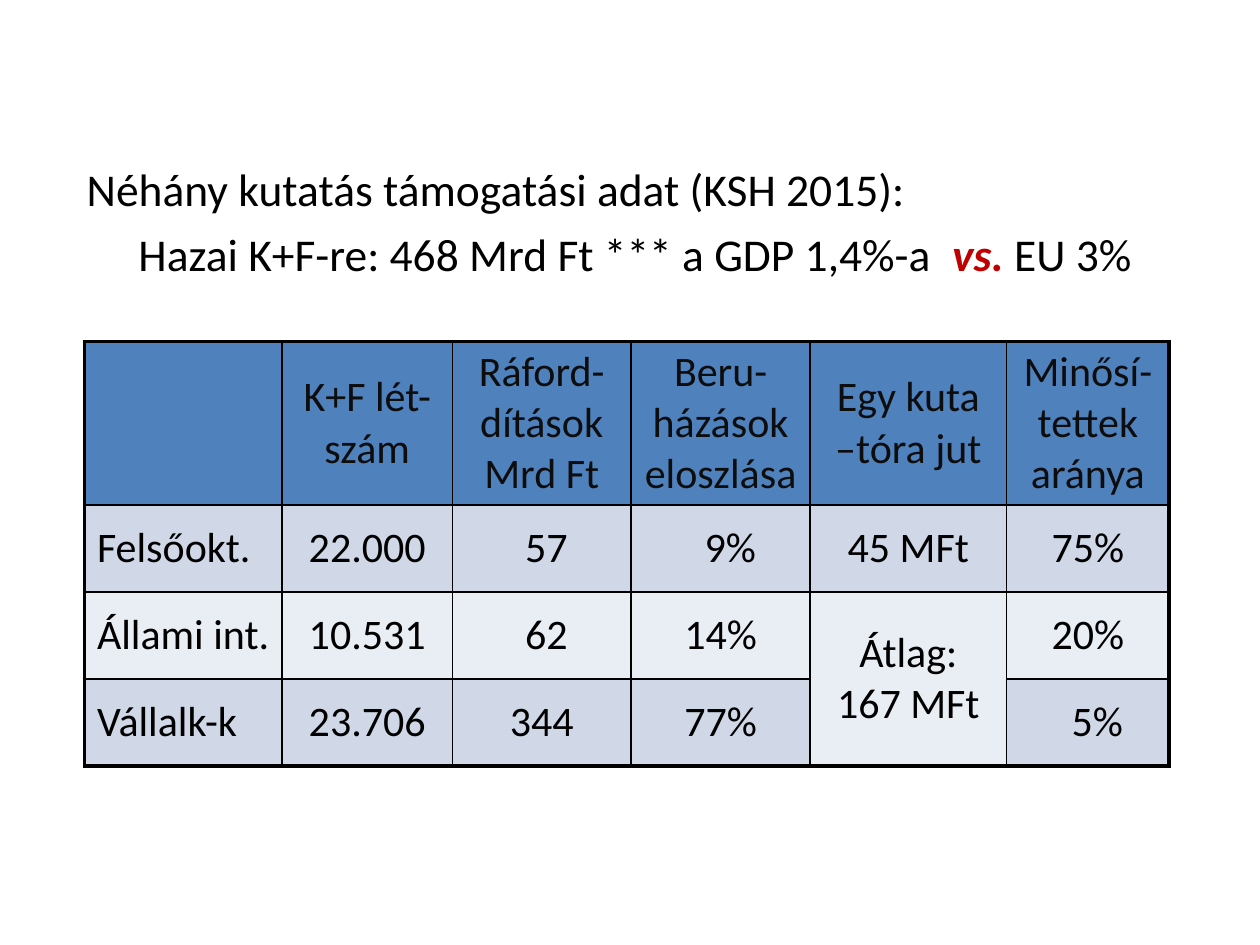
from pptx import Presentation
from pptx.dml.color import RGBColor
from pptx.enum.text import MSO_ANCHOR, MSO_AUTO_SIZE, PP_ALIGN
from pptx.oxml.ns import qn
from pptx.util import Inches, Pt
from lxml.etree import SubElement

BLACK = RGBColor(0x00, 0x00, 0x00)
NEAR_BLACK = RGBColor(0x0D, 0x0D, 0x0D)
RED = RGBColor(0xC0, 0x00, 0x00)
HEADER_BLUE = RGBColor(0x4F, 0x81, 0xBD)
BANDS = (RGBColor(0xE9, 0xED, 0xF4), RGBColor(0xD0, 0xD8, 0xE8))

FONT = "Calibri"
THIN, THICK = Pt(1), Pt(2.25)
COLUMN_WIDTHS = (1.57, 1.35, 1.42, 1.42, 1.56, 1.29)
ROW_HEIGHTS = (1.3, 0.69, 0.69, 0.69)
ROWS = (
    ("", "K+F lét-szám", "Ráford-dítások Mrd Ft", "Beru-házások eloszlása",
     "Egy kuta –tóra jut", "Minősí-tettek aránya"),
    ("Felsőokt.", "22.000", " 57", "  9%", "45 MFt", "75%"),
    ("Állami int.", "10.531", " 62", "14%", "Átlag: 167 MFt", "20%"),
    ("Vállalk-k", "23.706", "344", "77%", "", "  5%"),
)


def add_span(para, text, size, color=BLACK, emphasis=False):
    span = para.add_run()
    span.text = text
    span.font.name = FONT
    span.font.size = Pt(size)
    span.font.color.rgb = color
    span.font.bold = span.font.italic = emphasis


def add_heading(page):
    box = page.shapes.add_textbox(Inches(0.59), Inches(1.23), Inches(8.9), Inches(1.06))
    frame = box.text_frame
    frame.word_wrap = True
    frame.auto_size = MSO_AUTO_SIZE.SHAPE_TO_FIT_TEXT
    title = frame.paragraphs[0]
    add_span(title, "Néhány kutatás támogatási adat (KSH 2015):", 26)
    summary = frame.add_paragraph()
    summary.alignment = PP_ALIGN.CENTER
    add_span(summary, "Hazai K+F-re: 468 Mrd Ft *** a GDP 1,4%-a  ", 26)
    add_span(summary, "vs.", 26, RED, emphasis=True)
    add_span(summary, " EU 3%", 26)
    for para in frame.paragraphs:
        para.space_after = Pt(6)


def set_borders(cell, outer_sides):
    properties = cell._tc.get_or_add_tcPr()
    for side in "LRTB":
        width = THICK if side in outer_sides else THIN
        line = SubElement(properties, qn(f"a:ln{side}"), w=str(width))
        fill = SubElement(line, qn("a:solidFill"))
        SubElement(fill, qn("a:srgbClr"), val=str(BLACK))


def outer_sides_of(row, column):
    edges = {"L": column == 0, "R": column == len(COLUMN_WIDTHS) - 1,
             "T": row == 0, "B": row == len(ROW_HEIGHTS) - 1}
    return [side for side, is_outer in edges.items() if is_outer]


def fill_cell(cell, text, row, column):
    set_borders(cell, outer_sides_of(row, column))
    cell.fill.solid()
    cell.fill.fore_color.rgb = BANDS[row % 2] if row else HEADER_BLUE
    cell.vertical_anchor = MSO_ANCHOR.MIDDLE
    cell.margin_top = cell.margin_bottom = Inches(0.03)
    para = cell.text_frame.paragraphs[0]
    para.alignment = PP_ALIGN.CENTER if column else PP_ALIGN.LEFT
    if text:
        add_span(para, text, 24, BLACK if row else NEAR_BLACK)


def add_research_table(page):
    table = page.shapes.add_table(
        len(ROW_HEIGHTS), len(COLUMN_WIDTHS), Inches(0.67), Inches(2.71),
        Inches(sum(COLUMN_WIDTHS)), Inches(sum(ROW_HEIGHTS))).table
    for column, width in zip(table.columns, COLUMN_WIDTHS):
        column.width = Inches(width)
    for row, height in zip(table.rows, ROW_HEIGHTS):
        row.height = Inches(height)
    for row, texts in enumerate(ROWS):
        for column, text in enumerate(texts):
            fill_cell(table.cell(row, column), text, row, column)

    # One shared average for the last two rows, closed by the outer border
    average = table.cell(2, 4)
    average.merge(table.cell(3, 4))
    average._tc.tcPr.find(qn("a:lnB")).set("w", str(THICK))


def main():
    deck = Presentation()
    deck.slide_width, deck.slide_height = Inches(10), Inches(7.5)
    page = deck.slides.add_slide(deck.slide_layouts[6])
    add_heading(page)
    add_research_table(page)
    deck.save("out.pptx")


if __name__ == "__main__":
    main()
